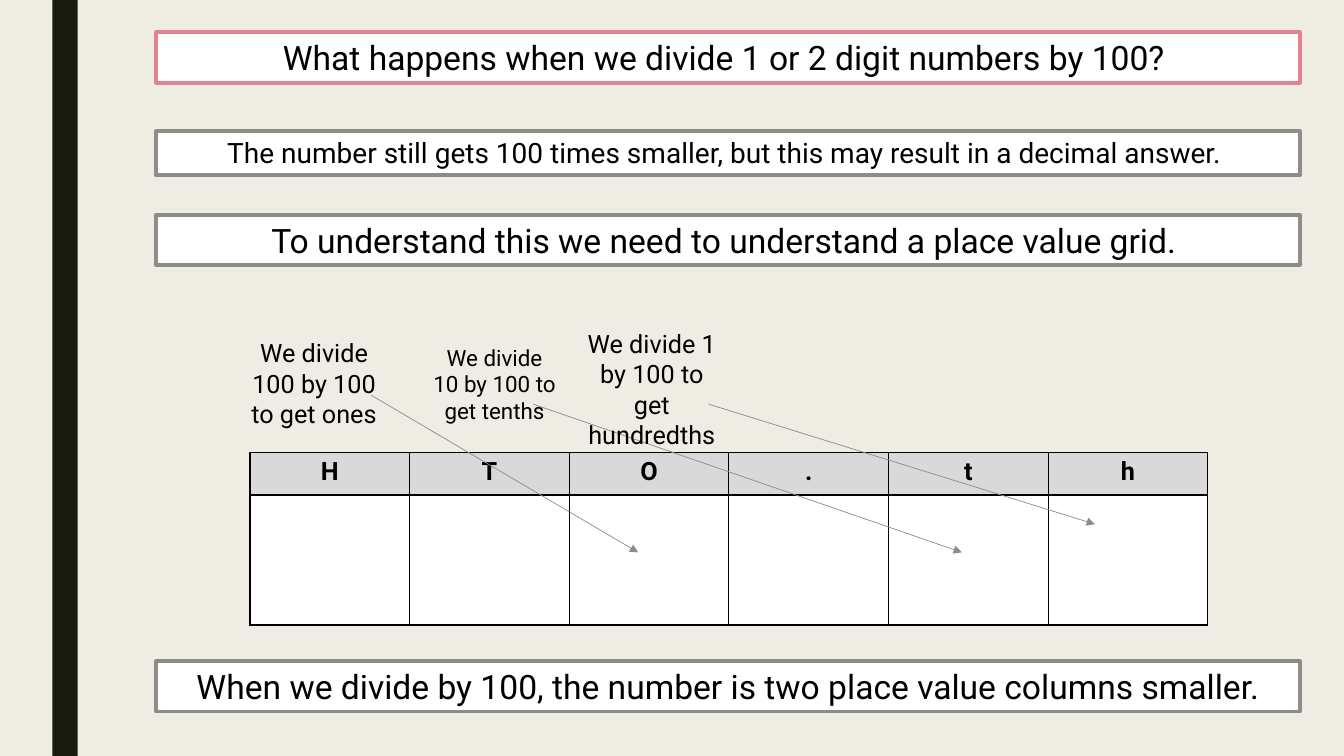
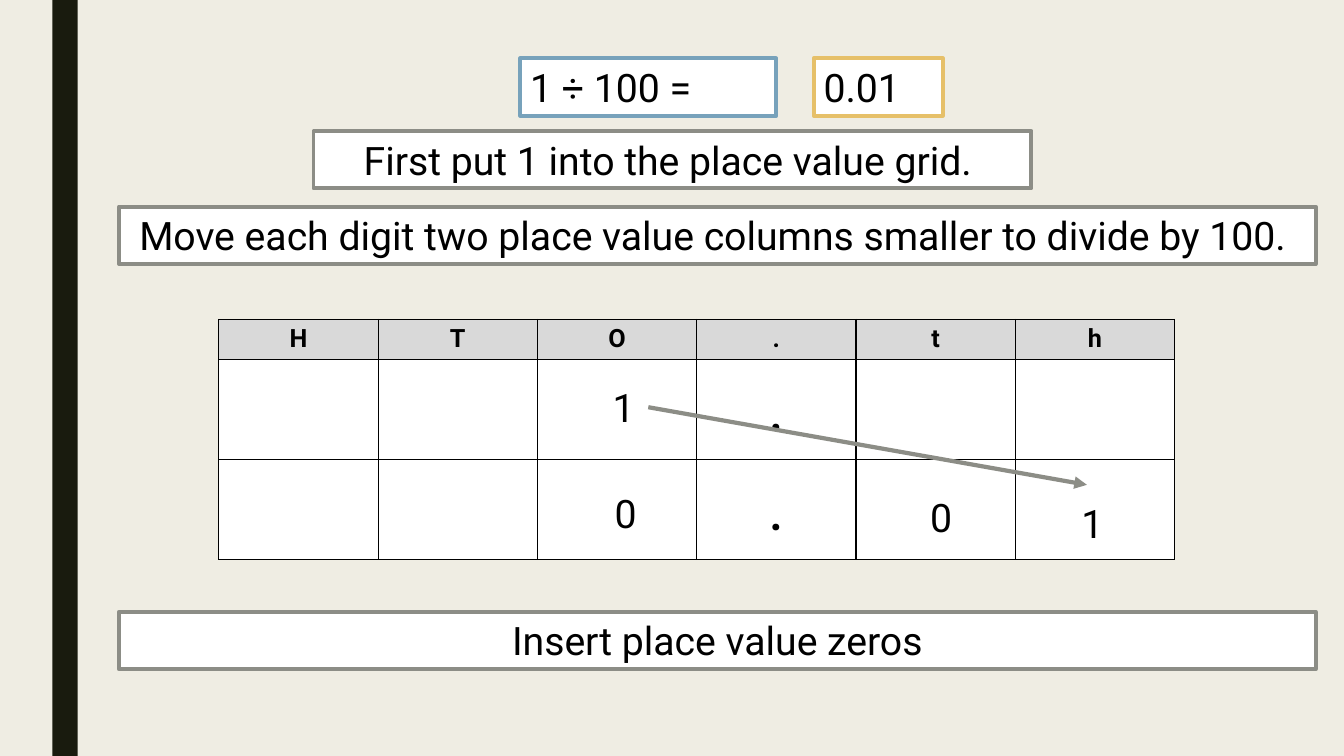
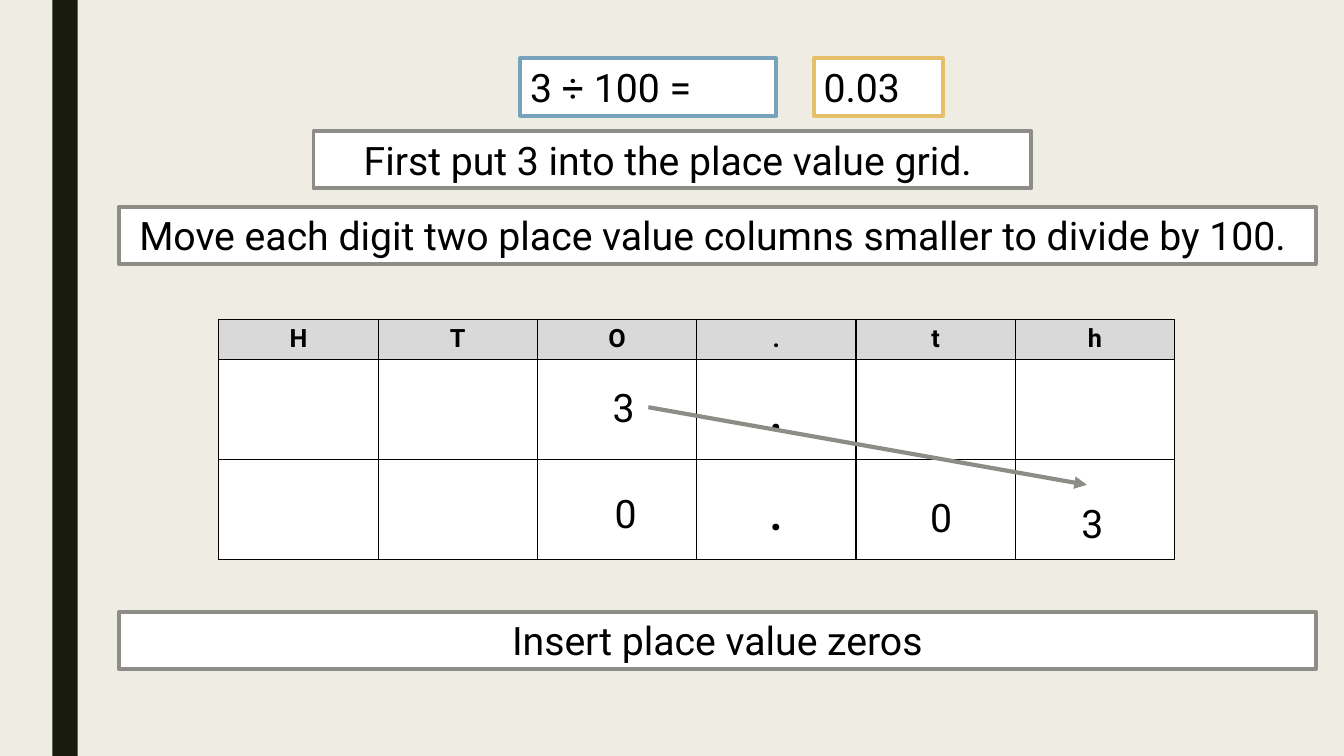
from dataclasses import dataclass

from lxml import etree
from pptx import Presentation
from pptx.dml.color import RGBColor
from pptx.enum.shapes import MSO_CONNECTOR, MSO_SHAPE
from pptx.enum.text import MSO_ANCHOR, MSO_AUTO_SIZE, PP_ALIGN
from pptx.oxml.ns import qn
from pptx.util import Inches, Pt

CENTER, LEFT = PP_ALIGN.CENTER, PP_ALIGN.LEFT
MIDDLE = MSO_ANCHOR.MIDDLE
FIT_TEXT = MSO_AUTO_SIZE.SHAPE_TO_FIT_TEXT
STRAIGHT, RECTANGLE = MSO_CONNECTOR.STRAIGHT, MSO_SHAPE.RECTANGLE


@dataclass(frozen=True)
class Theme:
    font: str = "Roboto"
    page: str = "EFEDE3"
    band: str = "191B0E"
    ink: str = "000000"
    paper: str = "FFFFFF"
    header: str = "D9D9D9"
    grey: str = "8C8D86"
    pink: str = "E28394"
    blue: str = "77A2BB"
    gold: str = "E6C069"
    small: int = 16
    label: int = 18
    note: int = 20
    statement: int = 24
    step: int = 28
    point: int = 44
    frame: float = 2.75
    border: float = 1
    thin_arrow: float = 0.5
    thick_arrow: float = 3


THEME = Theme()
SLIDE_W, SLIDE_H = 13.33, 7.5
BAND_LEFT, BAND_W = 0.52, 0.25
PLACES = ["H", "T", "O", ".", "t", "h"]
POINT_COLUMN = PLACES.index(".")

# Introduction: full-width statements as (text, top, height, size, frame colour)
INTRO_LEFT, INTRO_W = 1.55, 11.34
STATEMENTS = [
    ("What happens when we divide 1 or 2 digit numbers by 100? ",
     0.32, 0.5, THEME.statement, THEME.pink),
    ("The number still gets 100 times smaller, but this may result in a decimal answer. ",
     1.3, 0.44, THEME.note, THEME.grey),
    ("To understand this we need to understand a place value grid. ",
     2.13, 0.5, THEME.statement, THEME.grey),
    ("When we divide by 100, the number is two place value columns smaller.",
     6.56, 0.5, THEME.statement, THEME.grey),
]
# Each explanation: text, box, size, arrow start, arrow end
EXPLANATIONS = [
    ("We divide 100 by 100 to get ones", (2.31, 3.3, 1.61, 1.01), THEME.label,
     (3.68, 3.92), (6.33, 5.48)),
    ("We divide 10 by 100 to get tenths", (4.2, 3.36, 1.41, 0.91), THEME.small,
     (5.29, 4.01), (9.54, 5.48)),
    ("We divide 1 by 100 to get hundredths ", (5.71, 3.21, 1.51, 1.31), THEME.label,
     (7.03, 4.01), (10.86, 5.2)),
]

# Worked examples: {n} stands for the digit that is divided
EXAMPLE_DIGITS = [1, 3]
STEP_H = 0.57
# Each step: text, left, top, width, frame colour, alignment
STEPS = [
    ("{n} ÷ 100 =", 5.16, 0.58, 2.54, THEME.blue, LEFT),
    ("0.0{n}", 8.07, 0.58, 1.28, THEME.gold, LEFT),
    ("First put {n} into the place value grid. ", 3.11, 1.3, 7.12, THEME.grey, CENTER),
    ("Move each digit two place value columns smaller to divide by 100. ",
     1.18, 2.05, 11.87, THEME.grey, CENTER),
    ("Insert place value zeros", 1.18, 6.07, 11.87, THEME.grey, CENTER),
]
DIGIT_W = 1.21
GRID_DIGITS = [("{n}", 5.58, 3.75), ("{n}", 10.23, 4.9), ("0", 8.73, 4.84), ("0", 5.6, 4.81)]
MOVE_START, MOVE_END = (6.43, 4.04), (10.78, 4.81)


def rgb(colour):
    return RGBColor.from_string(colour)


def style_paragraph(paragraph, text, size, align=CENTER, bold=False):
    paragraph.text = text
    paragraph.alignment = align
    font = paragraph.font
    font.name, font.size, font.bold = THEME.font, Pt(size), bold
    font.color.rgb = rgb(THEME.ink)


def add_text(slide, text, box, size, frame=None, align=CENTER):
    """Add a text box; a frame colour also gives it a white fill and an outline."""
    label = slide.shapes.add_textbox(*map(Inches, box))
    label.text_frame.word_wrap = True
    label.text_frame.auto_size = FIT_TEXT
    style_paragraph(label.text_frame.paragraphs[0], text, size, align)
    if frame:
        label.fill.solid()
        label.fill.fore_color.rgb = rgb(THEME.paper)
        label.line.color.rgb = rgb(frame)
        label.line.width = Pt(THEME.frame)


def add_arrow(slide, start, end, width):
    arrow = slide.shapes.add_connector(STRAIGHT, *map(Inches, start + end))
    arrow.line.color.rgb = rgb(THEME.grey)
    arrow.line.width = Pt(width)
    etree.SubElement(arrow.line._get_or_add_ln(), qn("a:tailEnd"), type="triangle")
    etree.SubElement(arrow.element.spPr, qn("a:effectLst"))


def add_borders(cell):
    properties = cell._tc.get_or_add_tcPr()
    for side in ("lnL", "lnR", "lnT", "lnB"):
        border = etree.SubElement(properties, qn(f"a:{side}"), w=str(Pt(THEME.border)))
        fill = etree.SubElement(border, qn("a:solidFill"))
        etree.SubElement(fill, qn("a:srgbClr"), val=THEME.ink)


def add_place_value_grid(slide, left, top, width, row_heights, show_points=False):
    grid = slide.shapes.add_table(
        len(row_heights), len(PLACES),
        *map(Inches, (left, top, width, sum(row_heights)))).table
    grid.first_row = grid.horz_banding = False
    for column in grid.columns:
        column.width = Inches(width / len(PLACES))
    for r, height in enumerate(row_heights):
        grid.rows[r].height = Inches(height)
        for c, place in enumerate(PLACES):
            cell = grid.cell(r, c)
            add_borders(cell)
            cell.fill.solid()
            cell.fill.fore_color.rgb = rgb(THEME.paper if r else THEME.header)
            paragraph = cell.text_frame.paragraphs[0]
            if r == 0:
                style_paragraph(paragraph, place, THEME.label, bold=True)
            elif show_points and c == POINT_COLUMN:
                cell.vertical_anchor = MIDDLE
                style_paragraph(paragraph, place, THEME.point)


def set_up_master(prs, slide):
    """Give the master its background and move the side band onto it."""
    master = prs.slide_master
    master.background.fill.solid()
    master.background.fill.fore_color.rgb = rgb(THEME.page)
    band = slide.shapes.add_shape(
        RECTANGLE, *map(Inches, (BAND_LEFT, 0, BAND_W, SLIDE_H)))
    band.shadow.inherit = False
    band.fill.solid()
    band.fill.fore_color.rgb = rgb(THEME.band)
    band.line.fill.background()
    band.element.nvSpPr.cNvPr.set("id", "20")
    master.shapes.element.append(band.element)


def build_introduction(slide):
    for text, top, height, size, frame in STATEMENTS:
        add_text(slide, text, (INTRO_LEFT, top, INTRO_W, height), size, frame)
    add_place_value_grid(slide, 2.48, 4.49, 9.5, [0.42, 1.29])
    for text, box, size, start, end in EXPLANATIONS:
        add_text(slide, text, box, size)
        add_arrow(slide, start, end, THEME.thin_arrow)


def build_example(slide, digit):
    for text, left, top, width, frame, align in STEPS:
        add_text(slide, text.format(n=digit), (left, top, width, STEP_H),
                 THEME.step, frame, align)
    add_place_value_grid(slide, 2.17, 3.17, 9.48, [0.4, 0.99, 0.99], show_points=True)
    for text, left, top in GRID_DIGITS:
        add_text(slide, text.format(n=digit), (left, top, DIGIT_W, STEP_H), THEME.step)
    add_arrow(slide, MOVE_START, MOVE_END, THEME.thick_arrow)


def main():
    prs = Presentation()
    prs.slide_width, prs.slide_height = Inches(SLIDE_W), Inches(SLIDE_H)
    blank = prs.slide_layouts[6]
    introduction = prs.slides.add_slide(blank)
    set_up_master(prs, introduction)
    build_introduction(introduction)
    for digit in EXAMPLE_DIGITS:
        build_example(prs.slides.add_slide(blank), digit)
    prs.save("out.pptx")


if __name__ == "__main__":
    main()
